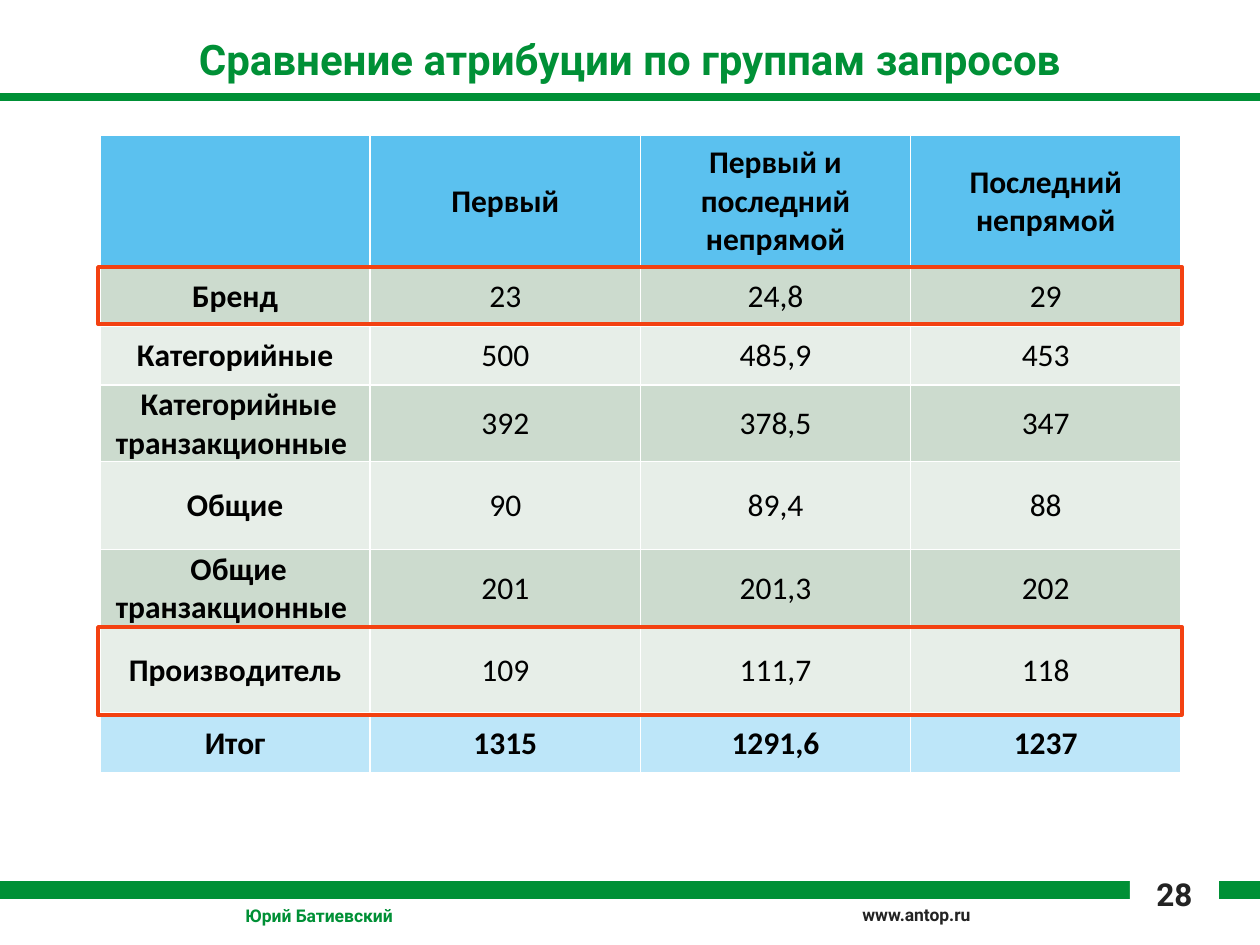
from lxml import etree
from pptx import Presentation
from pptx import util as u
from pptx.dml.color import RGBColor
from pptx.enum import shapes, text
from pptx.oxml import ns

GREEN = RGBColor(0x00, 0x90, 0x36)
DARK = RGBColor(0x23, 0x23, 0x23)
BLACK = RGBColor(0x00, 0x00, 0x00)
WHITE = RGBColor(0xFF, 0xFF, 0xFF)
RED = RGBColor(0xF3, 0x41, 0x11)
HEADER_BLUE = RGBColor(0x5B, 0xC1, 0xEF)
TOTAL_BLUE = RGBColor(0xBD, 0xE6, 0xF9)
DARK_BAND = RGBColor(0xCC, 0xDB, 0xCE)
LIGHT_BAND = RGBColor(0xE7, 0xEE, 0xE8)
CENTER = text.PP_ALIGN.CENTER
LEFT = text.PP_ALIGN.LEFT


def px(*lengths):
    return [u.Emu(round(length * 914400 / 126)) for length in lengths]


def write(paragraph, words, font, size, color, bold, align):
    paragraph.alignment = align
    run = paragraph.add_run()
    run.text = words
    run.font.name = font
    run.font.size = u.Pt(size)
    run.font.bold = bold
    run.font.color.rgb = color


presentation = Presentation()
presentation.slide_width, presentation.slide_height = px(1260, 945)
slide = presentation.slides.add_slide(presentation.slide_layouts[6])

for y, width in [(890, 10), (97, 5)]:
    rule = slide.shapes.add_connector(shapes.MSO_CONNECTOR.STRAIGHT, *px(0, y, 1260, y))
    rule.line.color.rgb = GREEN
    rule.line.width = u.Pt(width)
    etree.SubElement(rule._element.spPr, ns.qn("a:effectLst"))

labels = [
    ("Сравнение атрибуции по группам запросов", (64, 26, 1132, 65), 24, GREEN, CENTER,
     text.MSO_ANCHOR.MIDDLE),
    ("www.antop.ru", (850, 898, 310, 34), 10, DARK, LEFT, text.MSO_ANCHOR.TOP),
    ("Юрий Батиевский", (233, 899, 735, 31), 10, GREEN, LEFT, text.MSO_ANCHOR.TOP),
]
for words, place, size, color, align, anchor in labels:
    frame = slide.shapes.add_textbox(*px(*place)).text_frame
    frame.word_wrap = True
    frame.vertical_anchor = anchor
    write(frame.paragraphs[0], words, "Roboto", size, color, True, align)

rows = [
    (132, HEADER_BLUE, ["", "Первый", "Первый и последний непрямой", "Последний непрямой"]),
    (59, DARK_BAND, [" Бренд ", "23", "24,8", "29"]),
    (59, LIGHT_BAND, [" Категорийные ", "500", "485,9", "453"]),
    (59, DARK_BAND, [" Категорийные транзакционные ", "392", "378,5", "347"]),
    (88, LIGHT_BAND, [" Общие ", "90", "89,4", "88"]),
    (59, DARK_BAND, [" Общие транзакционные ", "201", "201,3", "202"]),
    (88, LIGHT_BAND, [" Производитель ", "109", "111,7", "118"]),
    (59, TOTAL_BLUE, ["Итог", "1315", "1291,6", "1237"]),
]
last = len(rows) - 1
table_height = sum(height for height, _, _ in rows)
table = slide.shapes.add_table(len(rows), 4, *px(100, 135, 1081, table_height)).table
for column in table.columns:
    column.width = px(270.25)[0]

for row, (height, fill, values) in enumerate(rows):
    table.rows[row].height = px(height)[0]
    top = 3 if row in (1, last) else 1
    bottom = 3 if row in (0, last - 1) else 1
    for column, value in enumerate(values):
        cell = table.cell(row, column)
        cell.margin_left = cell.margin_right = cell.margin_top = px(1)[0]
        cell.margin_bottom = 0
        cell.vertical_anchor = text.MSO_ANCHOR.MIDDLE
        properties = cell._tc.get_or_add_tcPr()
        for side, width in [("L", 1), ("R", 1), ("T", top), ("B", bottom)]:
            border = etree.SubElement(properties, ns.qn(f"a:ln{side}"), w=str(u.Pt(width)))
            solid = etree.SubElement(border, ns.qn("a:solidFill"))
            etree.SubElement(solid, ns.qn("a:srgbClr"), val=str(WHITE))
        cell.fill.solid()
        cell.fill.fore_color.rgb = fill
        if value:
            bold = column == 0 or row in (0, last)
            write(cell.text_frame.paragraphs[0], value, "Calibri", 18, BLACK, bold, CENTER)

number = slide.shapes.add_shape(shapes.MSO_SHAPE.RECTANGLE, *px(1130, 863, 89, 82))
number.shadow.inherit = False
number.fill.solid()
number.fill.fore_color.rgb = WHITE
number.line.fill.background()
number.text_frame.vertical_anchor = text.MSO_ANCHOR.TOP
number.text_frame.paragraphs[0].line_spacing = 1.15
write(number.text_frame.paragraphs[0], "28", "Roboto", 18, DARK, True, CENTER)

for y, height in [(267, 57), (627, 88)]:
    highlight = slide.shapes.add_shape(shapes.MSO_SHAPE.RECTANGLE, *px(98, y, 1084, height))
    highlight.shadow.inherit = False
    highlight.fill.background()
    highlight.line.color.rgb = RED
    highlight.line.width = u.Pt(2)

presentation.save("out.pptx")
